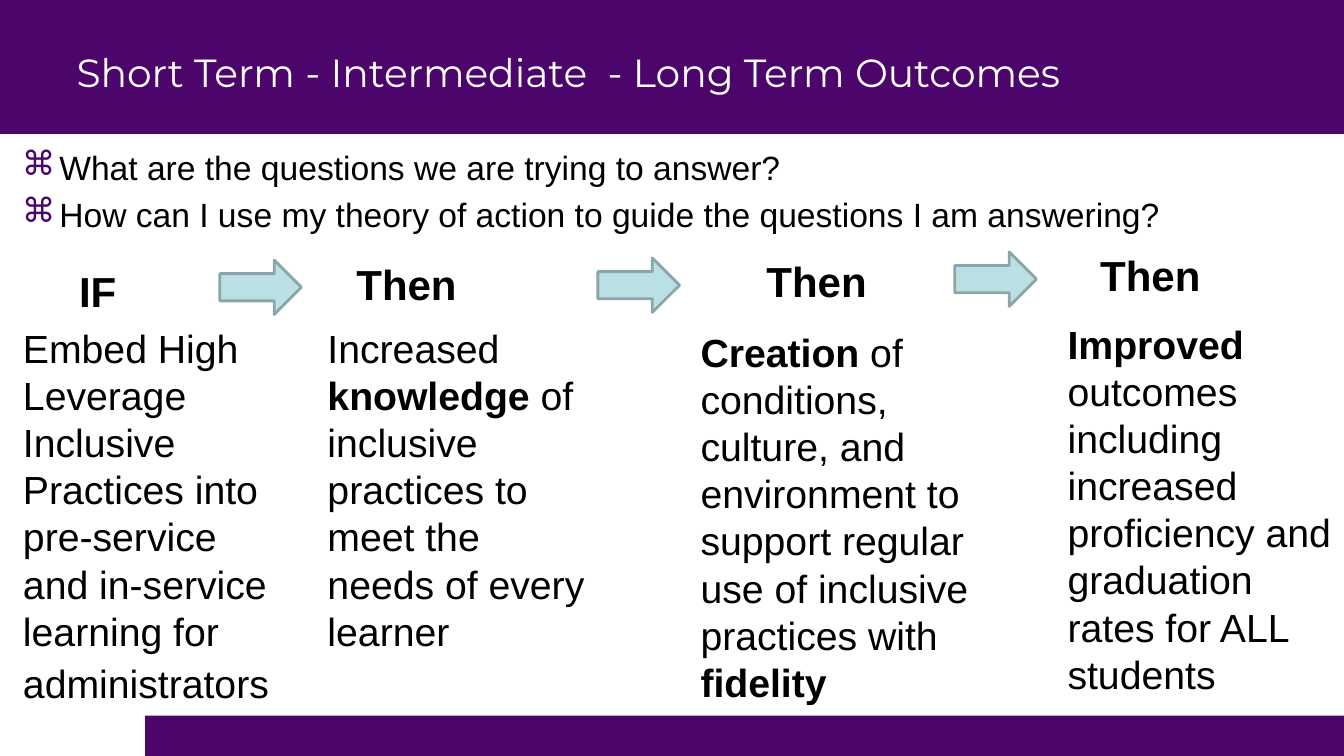
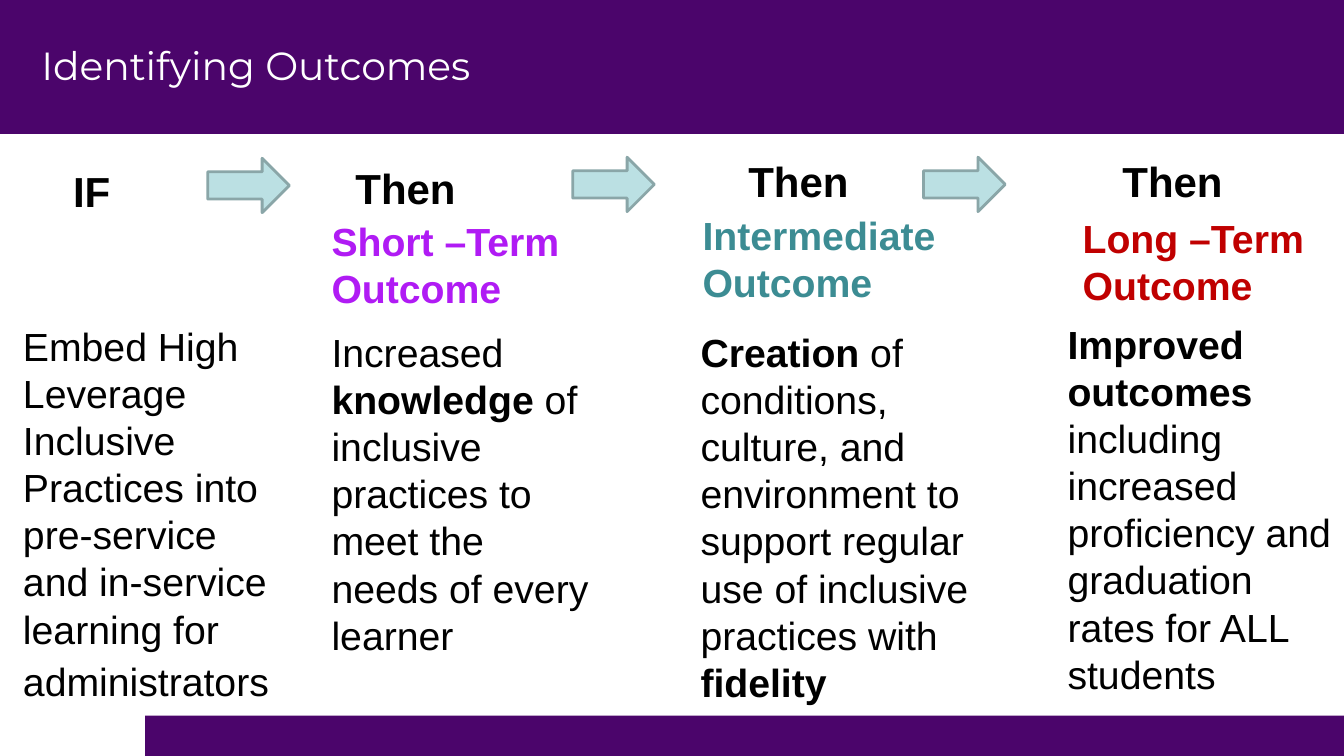
"""Build two slides that lay out a theory of action as outcome columns."""
from dataclasses import dataclass
from typing import Optional

import pptx
import pptx.dml.color
import pptx.enum.shapes
import pptx.enum.text
import pptx.oxml
import pptx.oxml.ns
import pptx.util

Inches = pptx.util.Inches
Pt = pptx.util.Pt
Align = pptx.enum.text.PP_ALIGN
Anchor = pptx.enum.text.MSO_ANCHOR
AutoSize = pptx.enum.text.MSO_AUTO_SIZE
Preset = pptx.enum.shapes.MSO_SHAPE


@dataclass(frozen=True)
class Theme:
    purple: str = "4B056B"
    white: str = "FFFFFF"
    black: str = "000000"
    arrow: str = "BBE0E3"
    arrow_line: str = "8AA6A8"
    violet: str = "B01BF4"
    teal: str = "3C8C93"
    red: str = "C00000"
    title_font: str = "Montserrat"
    body_font: str = "Arial"
    title_size: int = 28
    question_size: int = 24
    heading_size: int = 30
    body_size: int = 28
    tail_size: int = 32


THEME = Theme()


@dataclass(frozen=True)
class Box:
    left: float
    top: float
    width: float
    height: float

    def emu(self) -> tuple:
        return tuple(Inches(v) for v in (self.left, self.top, self.width, self.height))


@dataclass(frozen=True)
class Run:
    text: str
    bold: bool = False
    size: int = THEME.body_size
    color: str = THEME.black
    font: str = THEME.body_font


@dataclass(frozen=True)
class Label:
    term: str
    color: str
    left: float
    top: float


@dataclass(frozen=True)
class Column:
    heading: str
    heading_box: Box
    body: tuple
    left: float
    top: float
    arrow: Optional[tuple] = None
    label: Optional[Label] = None


@dataclass(frozen=True)
class Page:
    title: str
    title_at: tuple
    columns: tuple
    questions: tuple = ()


COLUMN_WIDTH = 2.87
HEADING_HEIGHT = 0.61
BANDS = (Box(0, 0, 13.33, 1.33), Box(1.44, 7.1, 11.89, 0.42))

PRACTICES = (
    Run("Embed High Leverage Inclusive Practices into pre-service and in-service "
        "learning for administrators"),
    Run(" ", size=THEME.tail_size),
)
KNOWLEDGE = (
    Run("Increased "),
    Run("knowledge ", True),
    Run("of inclusive practices to meet the needs of every learner"),
)
CONDITIONS = (
    Run("Creation ", True),
    Run("of conditions, culture, and environment to support regular use of "
        "inclusive practices with "),
    Run("fidelity", True),
)
RESULTS = "including increased proficiency and graduation rates for ALL students"


def heading_box(left: float, top: float, width: float = 2.5) -> Box:
    return Box(left, top, width, HEADING_HEIGHT)


PAGES = (
    Page(
        "Short Term - Intermediate  - Long Term Outcomes", (0.66, 0.09),
        (
            Column("IF", heading_box(0.31, 2.58, 1.32), PRACTICES, 0.13, 3.17, (2.18, 2.58)),
            Column("Then ", heading_box(2.88, 2.52, 2.42), KNOWLEDGE, 3.15, 3.17, (5.93, 2.56)),
            Column("Then", heading_box(6.85, 2.49), CONDITIONS, 6.85, 3.21, (9.47, 2.5)),
            Column("Then", heading_box(10.16, 2.43),
                   (Run("Improved ", True), Run("outcomes " + RESULTS)), 10.49, 3.13),
        ),
        ("What are the questions we are trying to answer?",
         "How can I use my theory of action to guide the questions I am answering?"),
    ),
    Page(
        "Identifying Outcomes", (0.31, 0.02),
        (
            Column("IF", heading_box(0.25, 1.59, 1.32), PRACTICES, 0.13, 3.15, (2.06, 1.57)),
            Column("Then ", heading_box(2.87, 1.56, 2.42), KNOWLEDGE, 3.19, 3.21, (5.68, 1.56),
                   Label("Short –Term", THEME.violet, 3.19, 2.11)),
            Column("Then", heading_box(6.67, 1.49), CONDITIONS, 6.85, 3.21, (9.16, 1.56),
                   Label("Intermediate", THEME.teal, 6.87, 2.05)),
            Column("Then", heading_box(10.38, 1.49),
                   (Run("Improved outcomes", True), Run(" " + RESULTS)), 10.49, 3.13, None,
                   Label("Long –Term", THEME.red, 10.64, 2.08)),
        ),
    ),
)


def rgb(value: str) -> pptx.dml.color.RGBColor:
    return pptx.dml.color.RGBColor.from_string(value)


def add_run(p, run: Run) -> None:
    r = p.add_run()
    r.text = run.text
    formats = {"name": run.font, "size": Pt(run.size), "bold": run.bold}
    for name, value in formats.items():
        setattr(r.font, name, value)
    r.font.color.rgb = rgb(run.color)


def add_bullet(p) -> None:
    pPr = p._p.get_or_add_pPr()
    pPr.set("marL", str(Inches(0.37)))
    pPr.set("indent", str(Inches(-0.37)))
    ns = pptx.oxml.ns.nsdecls("a")
    for xml in (
        f'<a:buClr {ns}><a:srgbClr val="{THEME.purple}"/></a:buClr>',
        f'<a:buChar {ns} char="⌘"/>',
    ):
        pPr.append(pptx.oxml.parse_xml(xml))


def add_text(slide, box: Box, paragraphs: tuple, align=Align.LEFT,
             bullets: bool = False) -> None:
    tf = slide.shapes.add_textbox(*box.emu()).text_frame
    formats = {"word_wrap": True, "vertical_anchor": Anchor.TOP,
               "auto_size": AutoSize.NONE if bullets else AutoSize.SHAPE_TO_FIT_TEXT}
    for name, value in formats.items():
        setattr(tf, name, value)
    for i, runs in enumerate(paragraphs):
        p = tf.add_paragraph() if i else tf.paragraphs[0]
        p.alignment = align
        if bullets:
            add_bullet(p)
            if i:
                p.space_before = Pt(5)
        for run in runs:
            add_run(p, run)


def add_filled(slide, preset, box: Box, fill: str, line: Optional[str] = None):
    sp = slide.shapes.add_shape(preset, *box.emu())
    sp.shadow.inherit = False
    sp.fill.solid()
    sp.fill.fore_color.rgb = rgb(fill)
    if line:
        sp.line.color.rgb = rgb(line)
        sp.line.width = Pt(2)
    else:
        sp.line.fill.background()
    return sp


def add_bands(slide) -> None:
    """Draw the purple bands and hand them to the layout that all slides share."""
    tree = slide.slide_layout.shapes.element
    for i, box in enumerate(BANDS):
        sp = add_filled(slide, Preset.RECTANGLE, box, THEME.purple)
        sp.name = f"Band {i + 1}"
        sp.element.nvSpPr.cNvPr.set("id", str(101 + i))
        tree.insert(2 + i, sp.element)


def set_title(slide, page: Page) -> None:
    sp = slide.shapes.title
    for name, value in zip(("left", "top", "width", "height"),
                           Box(*page.title_at, 12, 1.25).emu()):
        setattr(sp, name, value)
    tf = sp.text_frame
    formats = {"word_wrap": True, "vertical_anchor": Anchor.MIDDLE, "auto_size": AutoSize.NONE}
    for name, value in formats.items():
        setattr(tf, name, value)
    p = tf.paragraphs[0]
    p.alignment = Align.LEFT
    add_run(p, Run(page.title, False, THEME.title_size, THEME.white, THEME.title_font))


def add_column(slide, column: Column) -> None:
    heading = Run(column.heading, True, THEME.heading_size)
    add_text(slide, column.heading_box, ((heading,),), Align.CENTER)
    if column.arrow:
        add_filled(slide, Preset.RIGHT_ARROW, Box(*column.arrow, 0.81, 0.54),
                   THEME.arrow, THEME.arrow_line)
    if column.label:
        label = column.label
        lines = tuple((Run(text, True, color=label.color),) for text in (label.term, "Outcome"))
        add_text(slide, Box(label.left, label.top, COLUMN_WIDTH, 1.04), lines)
    add_text(slide, Box(column.left, column.top, COLUMN_WIDTH, 3.87), (column.body,))


def add_page(prs, page: Page):
    slide = prs.slides.add_slide(prs.slide_layouts[5])
    set_title(slide, page)
    if page.questions:
        lines = tuple((Run(text, size=THEME.question_size),) for text in page.questions)
        add_text(slide, Box(0.12, 1.41, 12, 1), lines, bullets=True)
    for column in page.columns:
        add_column(slide, column)
    return slide


def main() -> None:
    prs = pptx.Presentation()
    prs.slide_width, prs.slide_height = Inches(13.33), Inches(7.5)
    slides = [add_page(prs, page) for page in PAGES]
    add_bands(slides[0])
    prs.save("out.pptx")


if __name__ == "__main__":
    main()
